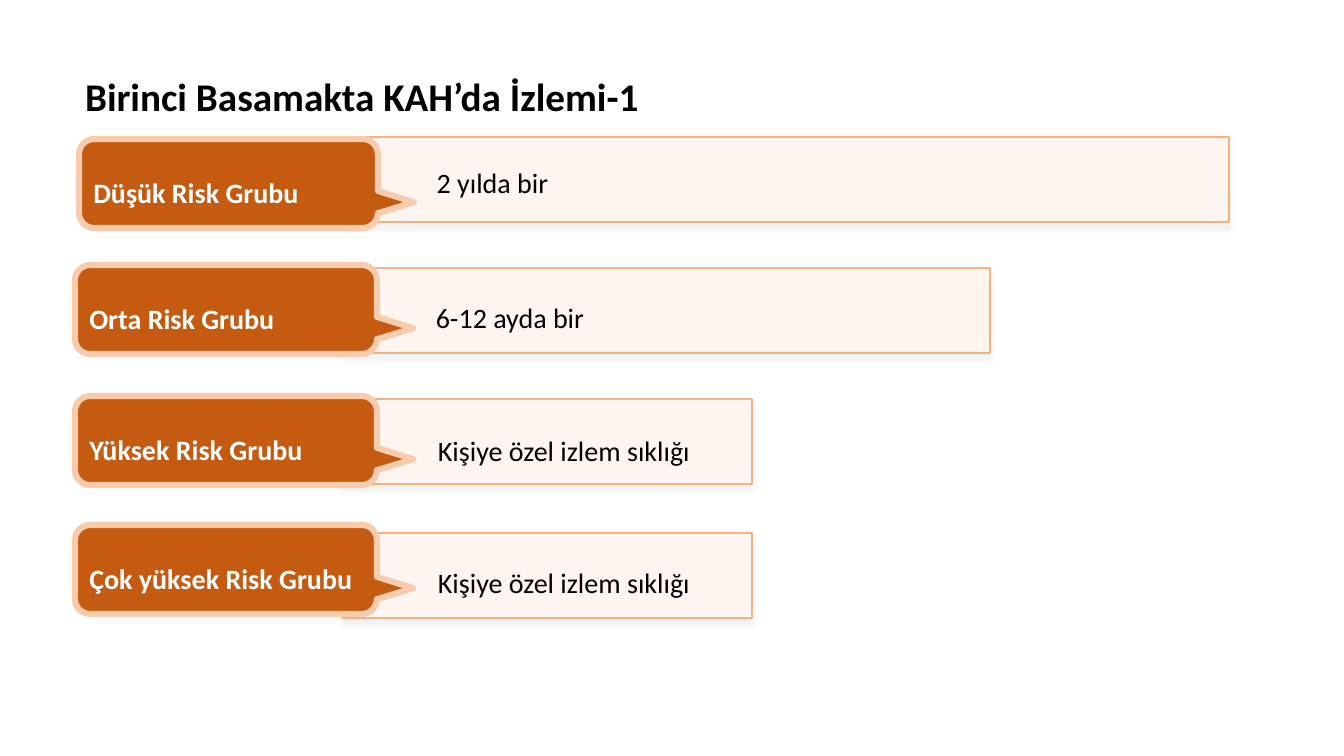
from lxml import etree
from pptx import Presentation
from pptx import util as u
from pptx.dml.color import RGBColor
from pptx.enum import shapes, text
from pptx.oxml import parse_xml
from pptx.oxml.ns import nsdecls, qn

TITLE = "Birinci Basamakta KAH’da İzlemi-1"
ROWS = [
    {"group": "Düşük Risk Grubu", "label": (79, 139, 299, 89),
     "interval": "2 yılda bir", "bar": (351, 137, 878, 85), "note": (396, 144, 193, 61)},
    {"group": "Orta Risk Grubu", "label": (75, 265, 302, 89),
     "interval": "6-12 ayda bir", "bar": (344, 268, 646, 85), "note": (408, 279, 204, 61)},
    {"group": "Yüksek Risk Grubu", "label": (75, 396, 302, 89),
     "interval": "Kişiye özel izlem sıklığı", "bar": (342, 399, 410, 85), "note": (409, 412, 310, 61)},
    {"group": "Çok yüksek Risk Grubu", "label": (75, 525, 302, 89),
     "interval": "Kişiye özel izlem sıklığı", "bar": (342, 533, 410, 85), "note": (409, 544, 310, 61)},
]
SCALE = 914400 / 100.8


def px(*lengths):
    return [u.Emu(round(length * SCALE)) for length in lengths]


def color(value):
    return RGBColor.from_string(value)


def write(box, words, size, ink, bold=False, align=text.PP_ALIGN.LEFT,
          anchor=text.MSO_ANCHOR.TOP, spacing=1.0):
    frame = box.text_frame
    frame.word_wrap = True
    frame.auto_size = text.MSO_AUTO_SIZE.NONE
    frame.vertical_anchor = anchor
    para = frame.paragraphs[0]
    para.alignment = align
    para.line_spacing = spacing
    span = para.add_run()
    span.text = words
    span.font.name = "Calibri"
    span.font.size = u.Pt(size)
    span.font.bold = bold
    span.font.color.rgb = color(ink)


def add_panel(page, kind, place, fill, line, width):
    panel = page.shapes.add_shape(kind, *px(*place))
    panel.shadow.inherit = False
    panel.fill.solid()
    panel.fill.fore_color.rgb = color(fill)
    panel.line.color.rgb = color(line)
    panel.line.width = u.Pt(width)
    return panel


def add_bar(page, place):
    bar = add_panel(page, shapes.MSO_SHAPE.RECTANGLE, place, "FEF5F0", "F4B183", 1.5)
    effects = bar._element.spPr.find(qn("a:effectLst"))
    effects.append(parse_xml(
        f'<a:outerShdw {nsdecls("a")} blurRad="50800" dist="50800" dir="5400000" '
        'algn="t" rotWithShape="0"><a:srgbClr val="F2F2F2"/></a:outerShdw>'))


def add_label(page, place, words):
    label = add_panel(page, shapes.MSO_SHAPE.ROUNDED_RECTANGULAR_CALLOUT, place,
                      "C55A11", "F8CBAD", 4.33)
    label.adjustments[0] = 0.62
    label.adjustments[1] = 0.21
    label.adjustments[2] = 0.17
    etree.SubElement(label.line._get_or_add_ln(), qn("a:round"))
    write(label, words, 20, "FFFFFF", True, anchor=text.MSO_ANCHOR.MIDDLE, spacing=1.5)


def main():
    deck = Presentation()
    deck.slide_width, deck.slide_height = px(1344, 756)
    page = deck.slides.add_slide(deck.slide_layouts[5])
    title = page.shapes.title
    title.left, title.top, title.width, title.height = px(75, 67, 1008, 57)
    write(title, TITLE, 28, "000000", True)
    for row in ROWS:
        add_bar(page, row["bar"])
        add_label(page, row["label"], row["group"])
        note = page.shapes.add_textbox(*px(*row["note"]))
        write(note, row["interval"], 20, "000000", align=text.PP_ALIGN.CENTER, spacing=1.5)
    deck.save("out.pptx")


if __name__ == "__main__":
    main()
